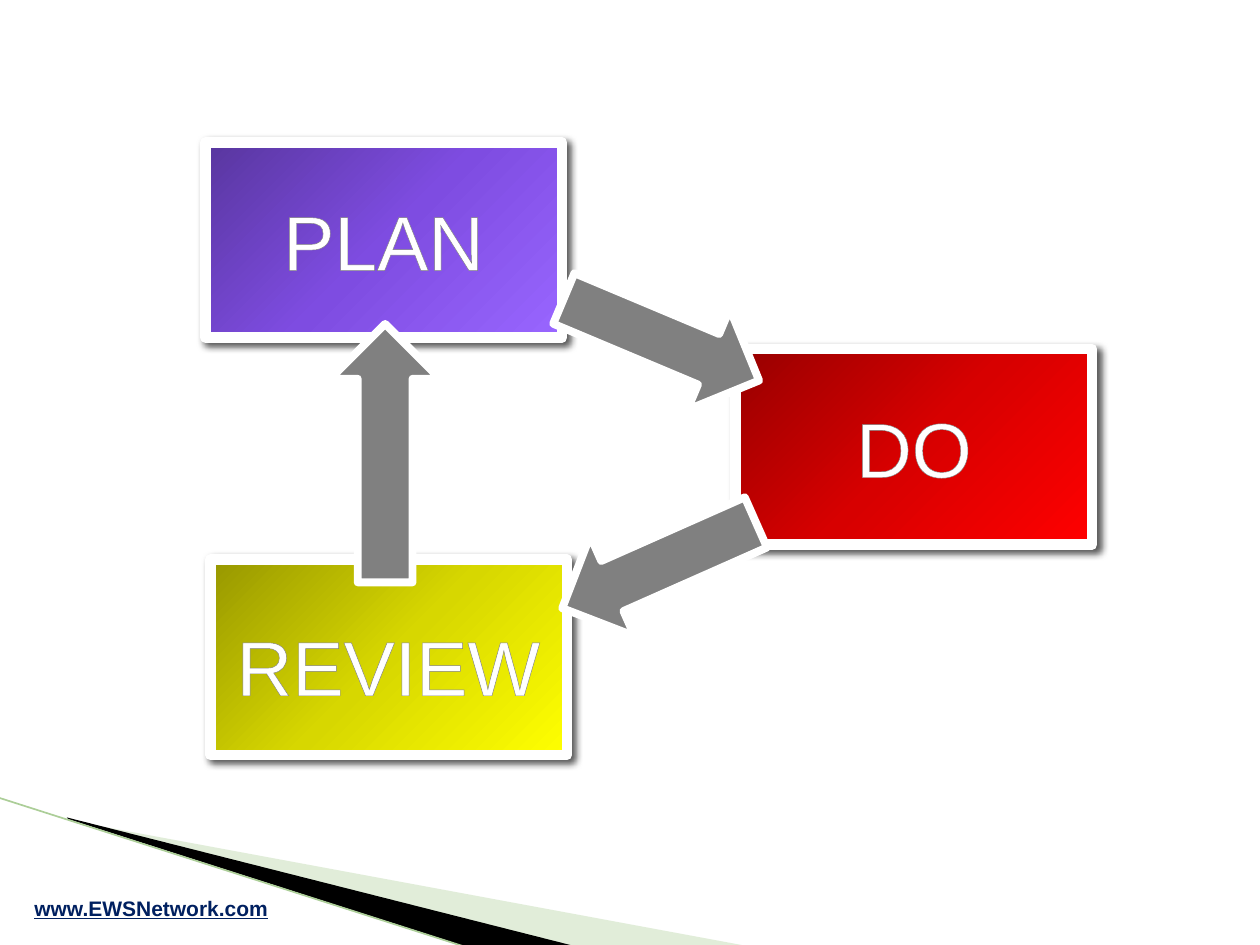
from pptx import Presentation
from pptx.dml.color import RGBColor
from pptx.enum.shapes import MSO_CONNECTOR, MSO_SHAPE
from pptx.enum.text import MSO_AUTO_SIZE, PP_ALIGN
from pptx.oxml import parse_xml
from pptx.oxml.ns import nsdecls, qn
from pptx.util import Cm, Pt
from lxml.etree import SubElement

HUES = {
    "white": "FFFFFF", "black": "000000", "gray": "808080", "navy": "002060",
    "mint": "B4D3A1", "leaf": "ACCE98",
}
FADES = {
    "PLAN": ("58369E", "7E4CE1", "9966FF"),
    "DO": ("970000", "D70000", "FF0000"),
    "REVIEW": ("979700", "D7D700", "FFFF00"),
}


def hue(name):
    return RGBColor.from_string(HUES[name])


class Board:
    """Hold the style and the current slide, and draw each kind of element."""

    face = "Arial"

    def __init__(self, deck):
        self.slide = deck.slides.add_slide(deck.slide_layouts[6])
        self.shapes = self.slide.shapes

    def wedge(self, points, color, alpha=None):
        spots = [(Cm(x), Cm(y)) for x, y in points]
        pen = self.shapes.build_freeform(*spots[0])
        pen.add_line_segments(spots[1:])
        shape = pen.convert_to_shape()
        shape.shadow.inherit = False
        shape.fill.solid()
        shape.fill.fore_color.rgb = hue(color)
        shape.line.fill.background()
        if alpha:
            tint = next(shape.element.spPr.iter(qn("a:srgbClr")))
            SubElement(tint, qn("a:alpha"), val=str(alpha * 1000))

    def edge(self, start, end, color, width):
        line = self.shapes.add_connector(
            MSO_CONNECTOR.STRAIGHT, *map(Cm, start + end))
        line.line.color.rgb = hue(color)
        line.line.width = Pt(width)
        SubElement(line.element.spPr, qn("a:effectLst"))

    def text(self, words, place, size, color, strong=None, rim=None):
        box = self.shapes.add_textbox(*map(Cm, place))
        frame = box.text_frame
        frame.word_wrap = True
        frame.auto_size = MSO_AUTO_SIZE.SHAPE_TO_FIT_TEXT
        para = frame.paragraphs[0]
        para.alignment = PP_ALIGN.CENTER
        run = para.add_run()
        run.text = words
        font = para.font
        font.name, font.size = self.face, Pt(size)
        font.bold = font.underline = strong
        font.color.rgb = hue(color)
        if rim:
            run.font.fill.solid()
            run.font.fill.fore_color.rgb = hue(color)
            run.font._element.insert(0, parse_xml(
                f'<a:ln {nsdecls("a")} w="9525"><a:solidFill>'
                f'<a:srgbClr val="{HUES[rim]}"/></a:solidFill></a:ln>'))

    def block(self, left, top, fade):
        shape = self.shapes.add_shape(
            MSO_SHAPE.RECTANGLE, *map(Cm, (left, top, 7.19, 3.94)))
        shape.shadow.inherit = False
        stops = "".join(
            f'<a:gs pos="{i * 50000}"><a:srgbClr val="{tone}"/></a:gs>'
            for i, tone in enumerate(fade))
        props = shape.element.spPr
        props.insert(2, parse_xml(
            f'<a:gradFill {nsdecls("a")} rotWithShape="1"><a:gsLst>{stops}'
            '</a:gsLst><a:lin ang="2700000" scaled="0"/></a:gradFill>'))
        shape.line.color.rgb = hue("white")
        shape.line.width = Pt(6)
        props.find(qn("a:effectLst")).append(parse_xml(
            f'<a:outerShdw {nsdecls("a")} blurRad="{Pt(4)}" dist="{Pt(3)}" '
            'dir="2700000" algn="tl" rotWithShape="0">'
            f'<a:srgbClr val="{HUES["black"]}"><a:alpha val="65000"/>'
            '</a:srgbClr></a:outerShdw>'))

    def arrow(self, left, top, width, turn):
        shape = self.shapes.add_shape(
            MSO_SHAPE.RIGHT_ARROW, *map(Cm, (left, top, width, 2.21)))
        shape.rotation = turn
        shape.shadow.inherit = False
        shape.fill.solid()
        shape.fill.fore_color.rgb = hue("gray")
        shape.line.color.rgb = hue("white")
        shape.line.width = Pt(4.5)


def main():
    deck = Presentation()
    deck.slide_width, deck.slide_height = Cm(25.4), Cm(19.05)
    board = Board(deck)

    board.wedge([(1.4, 16.54), (15.11, 19.08), (11.58, 19.08), (1.4, 16.51)],
                "mint", 40)
    board.wedge([(1.35, 16.48), (11.61, 19.08), (9.45, 19.1), (1.37, 16.51)],
                "black")
    board.edge((-0.03, 16.08), (9.42, 19.1), "leaf", 0.95)
    board.text("www.EWSNetwork.com", (0, 17.93, 6.1, 0.76), 12, "navy", True)

    steps = [
        ("PLAN", 4.14, 2.87, 0.86, 0.91),
        ("DO", 14.83, 7.04, 0.86, 0.91),
        ("REVIEW", 4.24, 11.28, 0, 1.07),
    ]
    for name, left, top, inset, drop in steps:
        board.block(left, top, FADES[name])
        board.text(name, (left + inset, top + drop, 7.19 - 2 * inset, 2.13),
                   44, "white", rim="gray")

    board.arrow(11.2, 5.74, 4.27, 22.8)
    board.arrow(11.15, 10.29, 4.27, 156.1)
    board.arrow(5.16, 8.03, 5.21, 270)

    deck.save("out.pptx")


if __name__ == "__main__":
    main()
